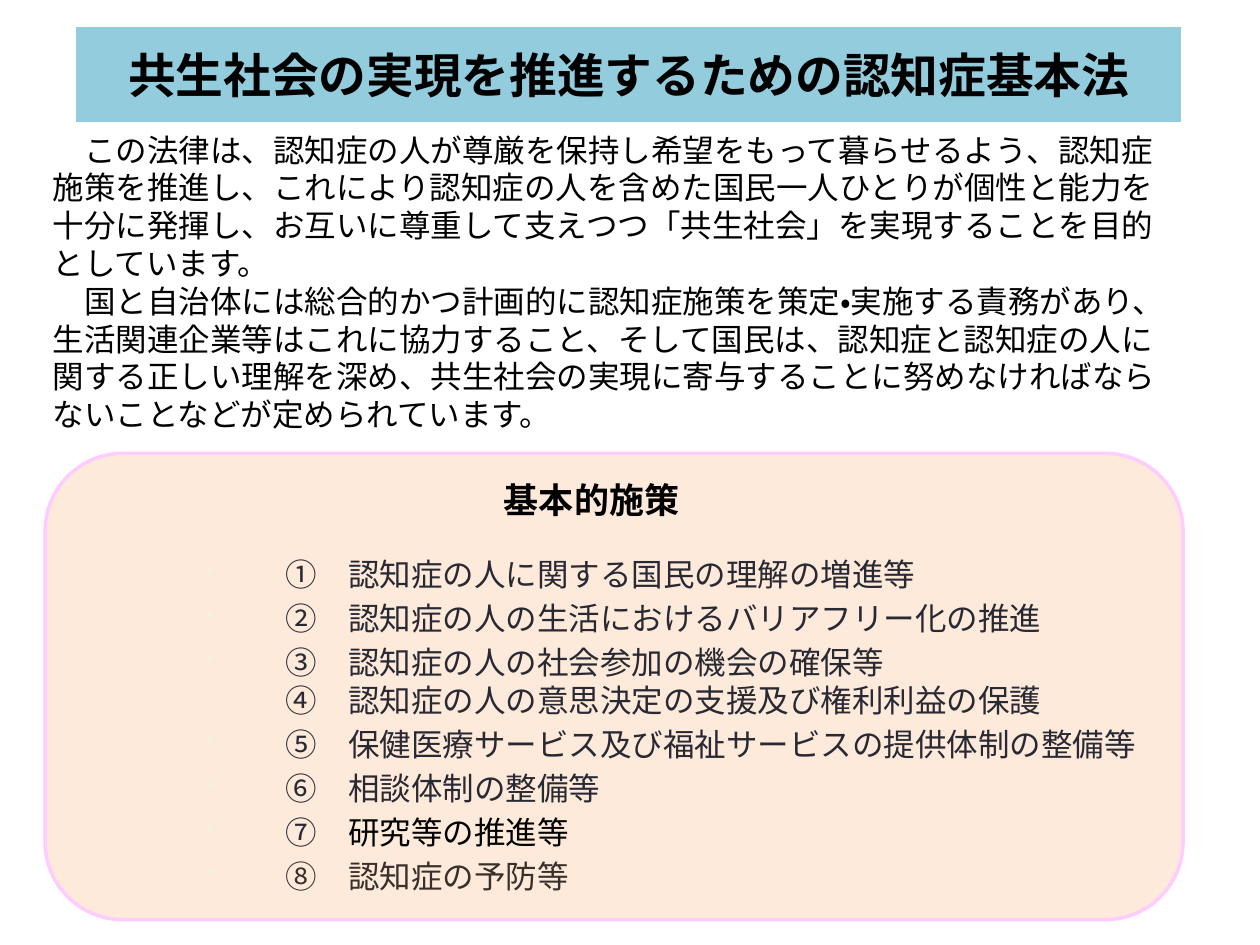
"""Build a slide on the basic act on dementia and its eight basic measures."""
from lxml import etree
from pptx import Presentation
from pptx.dml.color import RGBColor
from pptx.enum.lang import MSO_LANGUAGE_ID
from pptx.enum.shapes import MSO_SHAPE
from pptx.enum.text import MSO_ANCHOR, PP_ALIGN
from pptx.oxml.ns import qn
from pptx.util import Cm, Pt

RECTANGLE, ROUNDED = MSO_SHAPE.RECTANGLE, MSO_SHAPE.ROUNDED_RECTANGLE
MIDDLE, CENTER = MSO_ANCHOR.MIDDLE, PP_ALIGN.CENTER
JAPANESE = MSO_LANGUAGE_ID.JAPANESE
BLACK, DARK, BROWN = "000000", "292934", "39302B"
BODY_FONT, LIST_FONT = "Calibri", "Noto Sans CJK JP"

TITLE = "共生社会の実現を推進するための認知症基本法"
HEADING = "基本的施策"
INTRODUCTION = [
    " この法律は、認知症の人が尊厳を保持し希望をもって暮らせるよう、認知症施策を推進し、"
    "これにより認知症の人を含めた国民一人ひとりが個性と能力を十分に発揮し、"
    "お互いに尊重して支えつつ「共生社会」を実現することを目的としています。",
    " 国と自治体には総合的かつ計画的に認知症施策を策定・実施する責務があり、"
    "生活関連企業等はこれに協力すること、そして国民は、認知症と認知症の人に関する"
    "正しい理解を深め、共生社会の実現に寄与することに努めなければならないことなどが定められています。",
]
MEASURES = [
    [[("① 認知症の人に関する国民の理解の増進等", DARK)]],
    [[("② 認知症の人の生活におけるバリアフリー化の推進", DARK)]],
    [[("③ 認知症の人の社会参加の機会の確保等", DARK)],
     [("④ 認知症の人の意思決定の支援及び権利利益の保護", DARK)]],
    [[("⑤ 保健医療サービス及び福祉サービスの提供体制の整備等", DARK)]],
    [[("⑥ 相談体制の整備等", DARK)]],
    [[("⑦ ", DARK), ("研究等の推進等", BLACK)]],
    [[("⑧ 認知症の予防等", BROWN)]],
]
IDEOGRAPHIC_SPACE = chr(0x3000)


def color(value):
    return RGBColor.from_string(value)


def add_panel(page, kind, place, fill, line):
    panel = page.shapes.add_shape(kind, *map(Cm, place))
    panel.shadow.inherit = False
    panel.fill.solid()
    panel.fill.fore_color.rgb = color(fill)
    panel.line.color.rgb = color(line)
    panel.line.width = Pt(2)
    return panel


def add_text_box(page, place, wrap=True):
    frame = page.shapes.add_textbox(*map(Cm, place)).text_frame
    frame.word_wrap = wrap
    return frame


def add_span(para, text, size, tint=BLACK, bold=False, font=BODY_FONT):
    span = para.add_run()
    span.text = text.replace(" ", IDEOGRAPHIC_SPACE)
    span.font.size = Pt(size)
    span.font.bold = bold
    span.font.name = font
    span.font.language_id = JAPANESE
    span.font.color.rgb = color(tint)


def next_paragraph(frame, index):
    return frame.add_paragraph() if index else frame.paragraphs[0]


def add_bullet(para):
    properties = para._p.get_or_add_pPr()
    properties.set("marL", str(Cm(0.96)))
    properties.set("indent", str(-Cm(0.96)))
    tint = etree.SubElement(properties, qn("a:buClr"))
    etree.SubElement(tint, qn("a:srgbClr"), val="F3F2DC")
    etree.SubElement(properties, qn("a:buSzPct"), val="75000")
    etree.SubElement(properties, qn("a:buChar"), char="•")


def main():
    deck = Presentation()
    deck.slide_width, deck.slide_height = Cm(25.4), Cm(19.05)
    page = deck.slides.add_slide(deck.slide_layouts[6])

    add_panel(page, ROUNDED, (0.91, 9.14, 22.94, 9.4), "FDEADA", "FFCCFF")
    banner = add_panel(page, RECTANGLE, (1.5, 0.51, 22.35, 1.98), "93CDDD", "FFFFFF")
    banner.text_frame.vertical_anchor = MIDDLE
    para = banner.text_frame.paragraphs[0]
    para.alignment = CENTER
    add_span(para, TITLE, 27.3, bold=True)

    frame = add_text_box(page, (0.81, 2.51, 22.94, 6.4))
    for index, text in enumerate(INTRODUCTION):
        add_span(next_paragraph(frame, index), text, 18)

    frame = add_text_box(page, (9.91, 9.53, 4.06, 1.12), wrap=False)
    add_span(frame.paragraphs[0], HEADING, 20, bold=True)

    frame = add_text_box(page, (3.91, 11.07, 19.8, 7.2))
    for index, lines in enumerate(MEASURES):
        para = next_paragraph(frame, index)
        para.space_before = Pt(3.5 if index else 0)
        add_bullet(para)
        for number, spans in enumerate(lines):
            if number:
                para.add_line_break()
            for position, (text, tint) in enumerate(spans):
                lead = "" if position else " "
                add_span(para, lead + text, 18, tint, font=LIST_FONT)

    deck.save("out.pptx")


if __name__ == "__main__":
    main()
